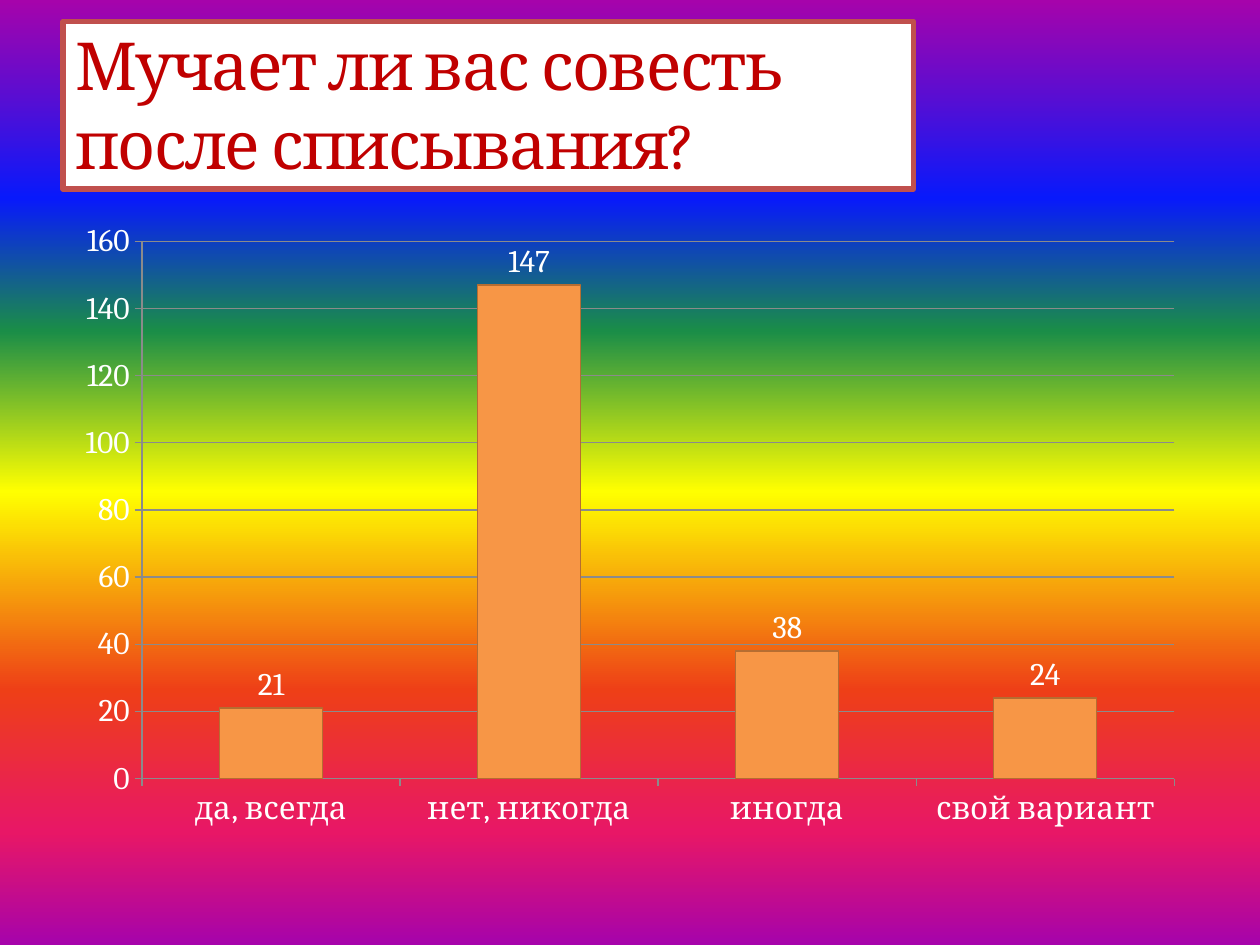
from dataclasses import dataclass

from lxml.etree import SubElement
from pptx import Presentation
from pptx.chart.data import CategoryChartData
from pptx.dml.color import RGBColor
from pptx.enum.chart import XL_CHART_TYPE as ChartType
from pptx.enum.chart import XL_LABEL_POSITION as LabelPosition
from pptx.enum.chart import XL_TICK_MARK as TickMark
from pptx.enum.shapes import MSO_SHAPE as Shape
from pptx.enum.text import MSO_ANCHOR as Anchor
from pptx.enum.text import PP_ALIGN as Align
from pptx.oxml.ns import qn
from pptx.slide import Slide
from pptx.util import Inches, Pt

FONT = "Cambria"
COLORS = {
    "title": "C00000",
    "title_border": "C0504D",
    "white": "FFFFFF",
    "bar": "F79646",
    "bar_border": "B66D31",
    "grid": "8B8B8B",
}


@dataclass(frozen=True)
class GradientStop:
    percent: int
    color: str


@dataclass(frozen=True)
class Answer:
    label: str
    votes: int


RAINBOW = [
    GradientStop(0, "A603AB"),
    GradientStop(21, "0819FB"),
    GradientStop(35, "1A8D48"),
    GradientStop(52, "FFFF00"),
    GradientStop(73, "EE3F17"),
    GradientStop(88, "E81766"),
    GradientStop(100, "A603AB"),
]
ANSWERS = [
    Answer("да, всегда", 21),
    Answer("нет, никогда", 147),
    Answer("иногда", 38),
    Answer("свой вариант", 24),
]


def color(name: str) -> RGBColor:
    return RGBColor.from_string(COLORS[name])


def paint_background(slide: Slide, stops: list[GradientStop]) -> None:
    fill = slide.background.fill
    fill.gradient()
    background = slide.background._cSld.find(qn("p:bg"))
    stop_list = next(background.iter(qn("a:gsLst")))
    for old_stop in list(stop_list):
        stop_list.remove(old_stop)
    for stop in stops:
        element = SubElement(stop_list, qn("a:gs"), pos=str(stop.percent * 1000))
        SubElement(element, qn("a:srgbClr"), val=stop.color)
    # Top to bottom
    next(background.iter(qn("a:lin"))).set("ang", "5400000")


def add_title(slide: Slide, text: str) -> None:
    shape = slide.shapes.add_shape(
        Shape.RECTANGLE, Inches(0.5), Inches(0.17), Inches(6.75), Inches(1.33)
    )
    shape.shadow.inherit = False
    shape.fill.solid()
    shape.fill.fore_color.rgb = color("white")
    shape.line.color.rgb = color("title_border")
    shape.line.width = Pt(3)

    frame = shape.text_frame
    frame.word_wrap = True
    frame.vertical_anchor = Anchor.BOTTOM
    paragraph = frame.paragraphs[0]
    paragraph.alignment = Align.LEFT
    paragraph.font.name = FONT
    paragraph.font.size = Pt(37.8)
    paragraph.font.color.rgb = color("title")
    run = paragraph.add_run()
    run.text = text
    run._r.get_or_add_rPr().set("spc", "-100")


def add_answer_chart(slide: Slide, answers: list[Answer]) -> None:
    data = CategoryChartData()
    data.categories = [answer.label for answer in answers]
    data.add_series("Series 1", [answer.votes for answer in answers])
    chart = slide.shapes.add_chart(
        ChartType.COLUMN_CLUSTERED,
        Inches(0.5), Inches(1.67), Inches(9), Inches(5), data,
    ).chart
    chart.has_legend = False
    chart.has_title = False
    chart.font.name = FONT
    chart.font.size = Pt(18)
    chart.font.color.rgb = color("white")

    # Axes and gridlines
    value_axis = chart.value_axis
    value_axis.minimum_scale = 0
    value_axis.maximum_scale = 160
    value_axis.major_unit = 20
    value_axis.has_major_gridlines = True
    for axis in (chart.category_axis, value_axis):
        axis.major_tick_mark = TickMark.OUTSIDE
    for element in (chart.category_axis, value_axis, value_axis.major_gridlines):
        element.format.line.color.rgb = color("grid")
        element.format.line.width = Pt(0.75)

    # Bars and their values
    plot = chart.plots[0]
    plot.gap_width = 150
    plot.vary_by_categories = False
    plot.has_data_labels = True
    plot.data_labels.show_value = True
    plot.data_labels.position = LabelPosition.OUTSIDE_END
    bars = plot.series[0].format
    bars.fill.solid()
    bars.fill.fore_color.rgb = color("bar")
    bars.line.color.rgb = color("bar_border")
    bars.line.width = Pt(0.75)


def main() -> None:
    presentation = Presentation()
    presentation.slide_width = Inches(10)
    presentation.slide_height = Inches(7.5)
    slide = presentation.slides.add_slide(presentation.slide_layouts[6])
    paint_background(slide, RAINBOW)
    add_answer_chart(slide, ANSWERS)
    add_title(slide, "Мучает ли вас совесть после списывания?")
    presentation.save("out.pptx")


if __name__ == "__main__":
    main()
